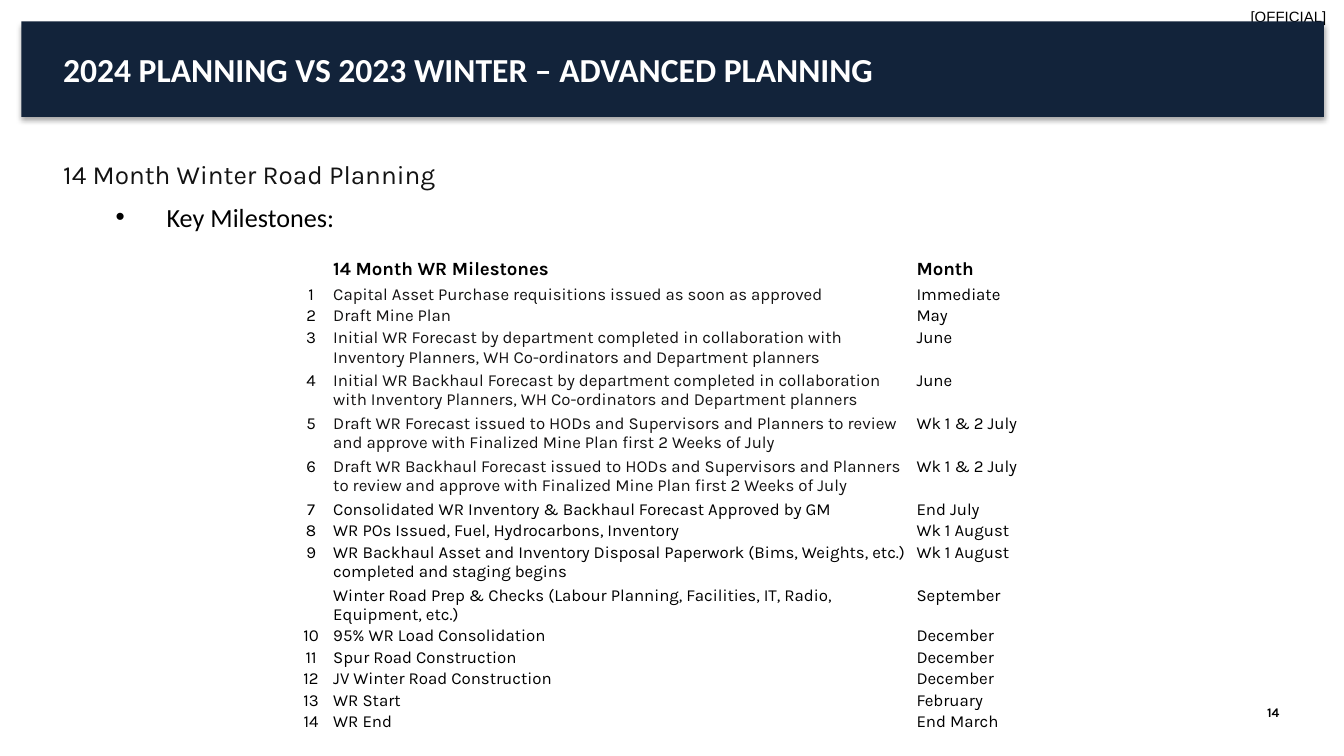
from lxml import etree
from pptx import Presentation, util as u
from pptx.dml.color import RGBColor
from pptx.enum import shapes, text
from pptx.oxml import ns

NAVY = RGBColor(0x12, 0x23, 0x3A)
WHITE = RGBColor(0xFF, 0xFF, 0xFF)
BLACK = RGBColor(0, 0, 0)
INK = RGBColor(0x13, 0x13, 0x13)
SOFT = RGBColor(0x14, 0x13, 0x13)

LEFT, MID, RIGHT = text.PP_ALIGN.LEFT, text.PP_ALIGN.CENTER, text.PP_ALIGN.RIGHT
TOP, HALF, BASE = text.MSO_ANCHOR.TOP, text.MSO_ANCHOR.MIDDLE, text.MSO_ANCHOR.BOTTOM

INITIAL = "completed in collaboration with Inventory Planners, WH Co-ordinators and Department planners"
DRAFT = ("issued to HODs and Supervisors and Planners to review and approve "
         "with Finalized Mine Plan first 2 Weeks of July")
ONE, TWO, TIGHT = 0.16, 0.32, 0.3
ROWS = [
    ("1", "Capital Asset Purchase requisitions issued as soon as approved", "Immediate", ONE),
    ("2", "Draft Mine Plan", "May", ONE),
    ("3", f"Initial WR Forecast by department {INITIAL}", "June", TWO),
    ("4", f"Initial WR Backhaul Forecast by department {INITIAL}", "June", TWO),
    ("5", f"Draft WR Forecast {DRAFT}", "Wk 1 & 2 July", TWO),
    ("6", f"Draft WR Backhaul Forecast {DRAFT}", "Wk 1 & 2 July", TWO),
    ("7", "Consolidated WR Inventory & Backhaul Forecast Approved by GM", "End July", ONE),
    ("8", "WR POs Issued, Fuel, Hydrocarbons, Inventory", "Wk 1 August", ONE),
    ("9", "WR Backhaul Asset and Inventory Disposal Paperwork (Bims, Weights, etc.) "
          "completed and staging begins", "Wk 1 August", TWO),
    ("", "Winter Road Prep & Checks (Labour Planning, Facilities, IT, Radio, Equipment, etc.)",
     "September", TIGHT),
    ("10", "95% WR Load Consolidation", "December", ONE),
    ("11", "Spur Road Construction", "December", ONE),
    ("12", "JV Winter Road Construction", "December", ONE),
    ("13", "WR Start", "February", ONE),
    ("14", "WR End", "End March", ONE),
    ("", "", "", ONE),
]


class Deck:
    COLS = 10
    HEAD, BODY = "Calibri", "Karla"

    def __init__(self, wide):
        self.prs = Presentation()
        self.prs.slide_width = u.Inches(wide)
        self.prs.slide_height = u.Inches(wide * 9 / 16)
        self.slide = self.prs.slides.add_slide(self.prs.slide_layouts[5])
        self.items = self.slide.shapes

    def grid(self, *cells):
        return [round(cell * self.prs.slide_width / self.COLS) for cell in cells]

    def frame(self, shape, anchor, right=0):
        tf = shape.text_frame
        tf.word_wrap, tf.auto_size = True, text.MSO_AUTO_SIZE.NONE
        tf.margin_left = tf.margin_top = tf.margin_bottom = 0
        tf.margin_right, = self.grid(right)
        tf.vertical_anchor = anchor
        return tf

    def run(self, para, words, size, font, color, bold=False, align=LEFT):
        para.alignment = align
        run = para.add_run()
        run.text = words
        face = run.font
        face.size, face.name, face.bold = u.Pt(size), font, bold
        face.color.rgb = color

    def bar(self, box, color):
        shape = self.items.add_shape(shapes.MSO_SHAPE.RECTANGLE, *self.grid(*box))
        shape.fill.solid()
        shape.fill.fore_color.rgb = color
        shape.line.fill.background()
        shape.shadow.inherit = False
        glow = shape._element.spPr.find(ns.qn("a:effectLst"))
        drop = etree.SubElement(glow, ns.qn("a:outerShdw"), blurRad=str(u.Pt(3.1)),
                                dist=str(u.Pt(1.8)), dir="5400000", rotWithShape="0")
        tint = etree.SubElement(drop, ns.qn("a:srgbClr"), val=str(BLACK))
        etree.SubElement(tint, ns.qn("a:alpha"), val="35000")

    def title(self, box, words):
        shape = self.items.title
        self.items._spTree.append(shape._element)
        shape.left, shape.top, shape.width, shape.height = self.grid(*box)
        para = self.frame(shape, HALF).paragraphs[0]
        self.run(para, words, 18, self.HEAD, WHITE, True)

    def label(self, box, words, size, font, anchor, bold=False, right=0):
        shape = self.items.add_textbox(*self.grid(*box))
        para = self.frame(shape, anchor, right).paragraphs[0]
        self.run(para, words, size, font, BLACK, bold, RIGHT)

    def body(self, box, lead, point):
        tf = self.frame(self.items.add_textbox(*self.grid(*box)), TOP)
        para = tf.paragraphs[0]
        para.space_after = u.Pt(6)
        self.run(para, lead, 14, self.BODY, INK)
        para = tf.add_paragraph()
        para.level, para.space_after = 1, u.Pt(3)
        props = para._p.get_or_add_pPr()
        inset, hang = self.grid(0.77, -0.38)
        props.set("marL", str(inset))
        props.set("indent", str(hang))
        etree.SubElement(props, ns.qn("a:buFont"), typeface="Arial")
        etree.SubElement(props, ns.qn("a:buChar"), char="•")
        self.run(para, point, 14, self.HEAD, BLACK)

    def cell(self, cell, words, size, color, bold, align):
        cell.fill.background()
        cell.margin_left = cell.margin_right = cell.margin_top = self.grid(0.01)[0]
        cell.margin_bottom = 0
        para = cell.text_frame.paragraphs[0]
        if words:
            self.run(para, words, size, self.BODY, color, bold, align)
        else:
            end = etree.SubElement(para._p, ns.qn("a:endParaRPr"), sz=str(size * 100))
            etree.SubElement(end, ns.qn("a:latin"), typeface=self.BODY)

    def table(self, spot, widths, head, rows):
        rows = [(*head, 0.2), *rows]
        size = sum(widths), sum(row[-1] for row in rows)
        table = self.items.add_table(len(rows), len(widths), *self.grid(*spot, *size)).table
        table.first_row = table.horz_banding = False
        for col, wide in zip(table.columns, self.grid(*widths)):
            col.width = wide
        for i, (*words, high) in enumerate(rows):
            table.rows[i].height, = self.grid(high)
            for j, word in enumerate(words):
                color = SOFT if j == 1 and 1 <= i <= 6 else BLACK
                self.cell(table.cell(i, j), word, 9 if i else 10, color,
                          i == 0, LEFT if j else MID)


def main():
    deck = Deck(10)
    deck.label((9.17, 0, 0.83, 0.24), "[OFFICIAL]", 8, "Arial", HALF, right=0.13)
    deck.bar((0.16, 0.16, 9.69, 0.71), NAVY)
    deck.label((9.21, 5.2, 0.31, 0.16), "14", 7, deck.BODY, BASE, bold=True)
    deck.body((0.47, 1.18, 9.06, 3.94), "14 Month Winter Road Planning", "Key Milestones:")
    deck.title((0.47, 0.16, 8.27, 0.71), "2024 PLANNING VS 2023 WINTER – ADVANCED PLANNING")
    deck.table((2.16, 1.91), (0.31, 4.34, 1.03), ("", "14 Month WR Milestones", "Month"), ROWS)
    deck.prs.save("out.pptx")


if __name__ == "__main__":
    main()
